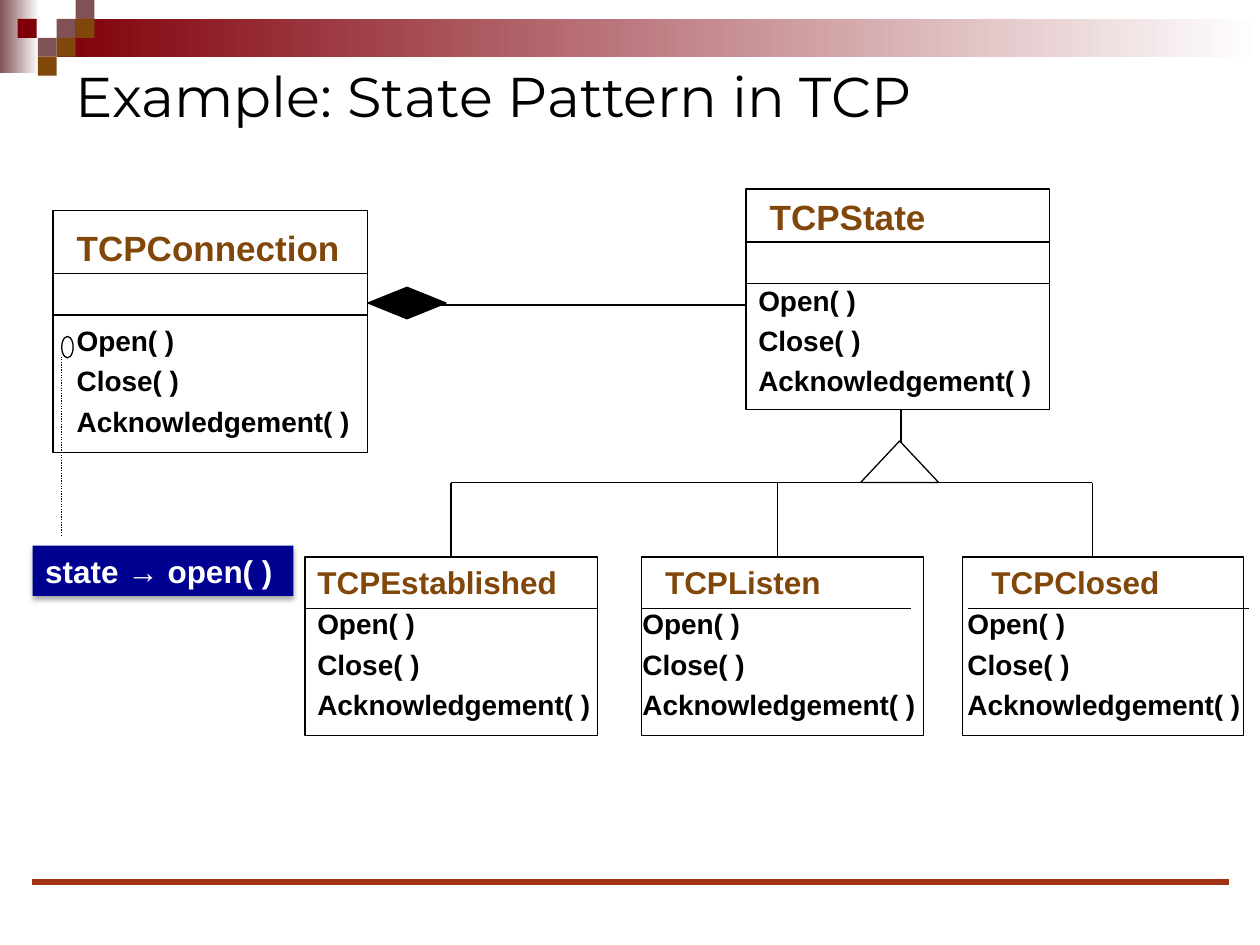
from dataclasses import dataclass

from lxml.etree import SubElement
from pptx import Presentation
from pptx.dml.color import RGBColor
from pptx.enum.dml import MSO_LINE
from pptx.enum.shapes import MSO_CONNECTOR, MSO_SHAPE
from pptx.enum.text import MSO_ANCHOR
from pptx.oxml.ns import qn
from pptx.util import Inches, Pt

COLORS = {
    "black": "000000", "white": "FFFFFF", "mauve": "805255", "maroon": "80000A",
    "brown": "81460A", "rust": "A13214", "navy": "000090",
}
OPERATIONS = ("Open( )", "Close( )", "Acknowledgement( )")
TILE = 0.15

Box = tuple[float, float, float, float]
Point = tuple[float, float]


@dataclass(frozen=True)
class UmlClass:
    name: str
    box: Box
    name_box: Box
    name_size: int
    operations_box: Box
    dividers: tuple[float, ...]
    divider_span: Point


@dataclass(frozen=True)
class Tile:
    left: float
    top: float
    color: str


CONNECTION = UmlClass("TCPConnection", (0.42, 1.67, 2.5, 1.92), (0.51, 1.75, 2.32, 0.44),
                      20, (0.51, 2.58, 2.41, 0.99), (2.17, 2.5), (0.42, 2.91))
STATE = UmlClass("TCPState", (5.92, 1.5, 2.41, 1.75), (6.01, 1.5, 2.05, 0.43),
                 20, (5.92, 2.26, 2.42, 0.99), (1.92, 2.25), (5.92, 8.33))
ESTABLISHED = UmlClass("TCPEstablished", (2.42, 4.42, 2.32, 1.42), (2.42, 4.42, 2.41, 0.4),
                       18, (2.42, 4.83, 2.42, 0.99), (4.83,), (2.42, 4.74))
LISTEN = UmlClass("TCPListen", (5.09, 4.42, 2.24, 1.42), (5.18, 4.42, 1.61, 0.4),
                  18, (5, 4.83, 2.42, 0.99), (4.83,), (5.09, 7.23))
CLOSED = UmlClass("TCPClosed", (7.64, 4.42, 2.23, 1.42), (7.77, 4.42, 1.61, 0.4),
                  18, (7.58, 4.83, 2.42, 0.99), (4.83,), (7.68, 9.91))

TILES = (
    Tile(0.45, 0.15, "mauve"), Tile(0.6, 0, "mauve"), Tile(0.6, 0.15, "brown"),
    Tile(0.3, 0.3, "mauve"), Tile(0.14, 0.15, "maroon"), Tile(0.45, 0.3, "brown"),
    Tile(0.3, 0.45, "brown"),
)


def rgb(color: str) -> RGBColor:
    return RGBColor.from_string(COLORS[color])


def add_figure(slide, box: Box, fill="white", outline=None, kind=MSO_SHAPE.RECTANGLE):
    figure = slide.shapes.add_shape(kind, *map(Inches, box))
    figure.shadow.inherit = False
    figure.fill.solid()
    figure.fill.fore_color.rgb = rgb(fill)
    if outline:
        figure.line.color.rgb = rgb(outline)
        figure.line.width = Pt(0.75)
    else:
        figure.line.fill.background()
    return figure


def add_fade(slide, box: Box, start: str) -> None:
    fade = add_figure(slide, box)
    fade.fill.gradient()
    fade.fill.gradient_angle = 0
    for stop, color in zip(fade.fill.gradient_stops, (start, "white")):
        stop.color.rgb = rgb(color)


def add_line(slide, start: Point, end: Point, color="black", width=0.75, dash=None):
    line = slide.shapes.add_connector(MSO_CONNECTOR.STRAIGHT, *map(Inches, start + end))
    line.line.color.rgb = rgb(color)
    line.line.width = Pt(width)
    if dash:
        line.line.dash_style = dash
    SubElement(line._element.spPr, qn("a:effectLst"))
    return line


def write(frame, *texts: str, size=16, color="black", font="Arial", bold=True,
          line_spacing=1.0, gap=0.0, anchor=MSO_ANCHOR.TOP) -> None:
    frame.word_wrap = True
    frame.vertical_anchor = anchor
    for index, text in enumerate(texts):
        paragraph = frame.paragraphs[0] if index == 0 else frame.add_paragraph()
        paragraph.text = text
        paragraph.line_spacing = line_spacing
        if index:
            paragraph.space_before = Pt(gap)
        paragraph.font.size = Pt(size)
        paragraph.font.name = font
        paragraph.font.bold = bold
        paragraph.font.color.rgb = rgb(color)


def add_text(slide, box: Box, *texts: str, **style) -> None:
    write(slide.shapes.add_textbox(*map(Inches, box)).text_frame, *texts, **style)


def add_class(slide, uml: UmlClass):
    body = add_figure(slide, uml.box, outline="black")
    add_text(slide, uml.name_box, uml.name, size=uml.name_size, color="brown")
    add_text(slide, uml.operations_box, *OPERATIONS, line_spacing=0.75, gap=8.7)
    left, right = uml.divider_span
    for y in uml.dividers:
        add_line(slide, (left, y), (right, y))
    return body


def add_theme(slide) -> None:
    add_fade(slide, (0, 0, 0.31, 0.58), "mauve")
    add_fade(slide, (0.45, 0.15, 9.55, 0.3), "maroon")
    for tile in TILES:
        add_figure(slide, (tile.left, tile.top, TILE, TILE), tile.color)
    add_line(slide, (0.25, 7), (9.75, 7), "rust", 3)
    add_text(slide, (0.5, 0.42, 9, 0.67), "Example: State Pattern in TCP", size=32,
             font="Montserrat", bold=False, anchor=MSO_ANCHOR.MIDDLE)


def add_inheritance(slide, established) -> None:
    bar, top = 3.83, 4.42
    add_line(slide, (7.15, 3.58), (7.15, 3.25))
    add_figure(slide, (6.83, 3.5, 0.62, 0.33), outline="black",
               kind=MSO_SHAPE.ISOSCELES_TRIANGLE)
    add_line(slide, (7.42, bar), (8.67, bar))
    add_line(slide, (7.33, bar), (3.58, bar))
    branches = [add_line(slide, (x, bar), (x, top)) for x in (3.58, 6.17, 8.67)]
    branches[0].end_connect(established, 0)


def add_call_note(slide) -> None:
    add_figure(slide, (0.49, 2.67, 0.09, 0.17), outline="black", kind=MSO_SHAPE.OVAL)
    note = add_figure(slide, (0.26, 4.33, 2.07, 0.4), "navy")
    effects = note._element.spPr.find(qn("a:effectLst"))
    shadow = SubElement(effects, qn("a:outerShdw"), blurRad=str(Pt(3.1)),
                        dist=str(Pt(1.8)), dir="5400000", rotWithShape="0")
    shade = SubElement(shadow, qn("a:srgbClr"), val=COLORS["black"])
    SubElement(shade, qn("a:alpha"), val="35000")
    write(note.text_frame, "state → open( )", size=18, color="white")
    note.text_frame.paragraphs[0].alignment = 1
    add_line(slide, (0.49, 2.83), (0.49, 4.25), dash=MSO_LINE.ROUND_DOT)


def main() -> None:
    deck = Presentation()
    deck.slide_width, deck.slide_height = Inches(10), Inches(7.5)
    slide = deck.slides.add_slide(deck.slide_layouts[6])
    add_theme(slide)
    add_class(slide, CONNECTION)
    add_figure(slide, (2.92, 2.28, 0.62, 0.25), "black", "black",
               MSO_SHAPE.FLOWCHART_DECISION)
    add_line(slide, (3.45, 2.42), (6.04, 2.42))
    add_class(slide, STATE)
    established, *_ = [add_class(slide, uml) for uml in (ESTABLISHED, LISTEN, CLOSED)]
    add_inheritance(slide, established)
    add_call_note(slide)
    deck.save("out.pptx")


if __name__ == "__main__":
    main()
